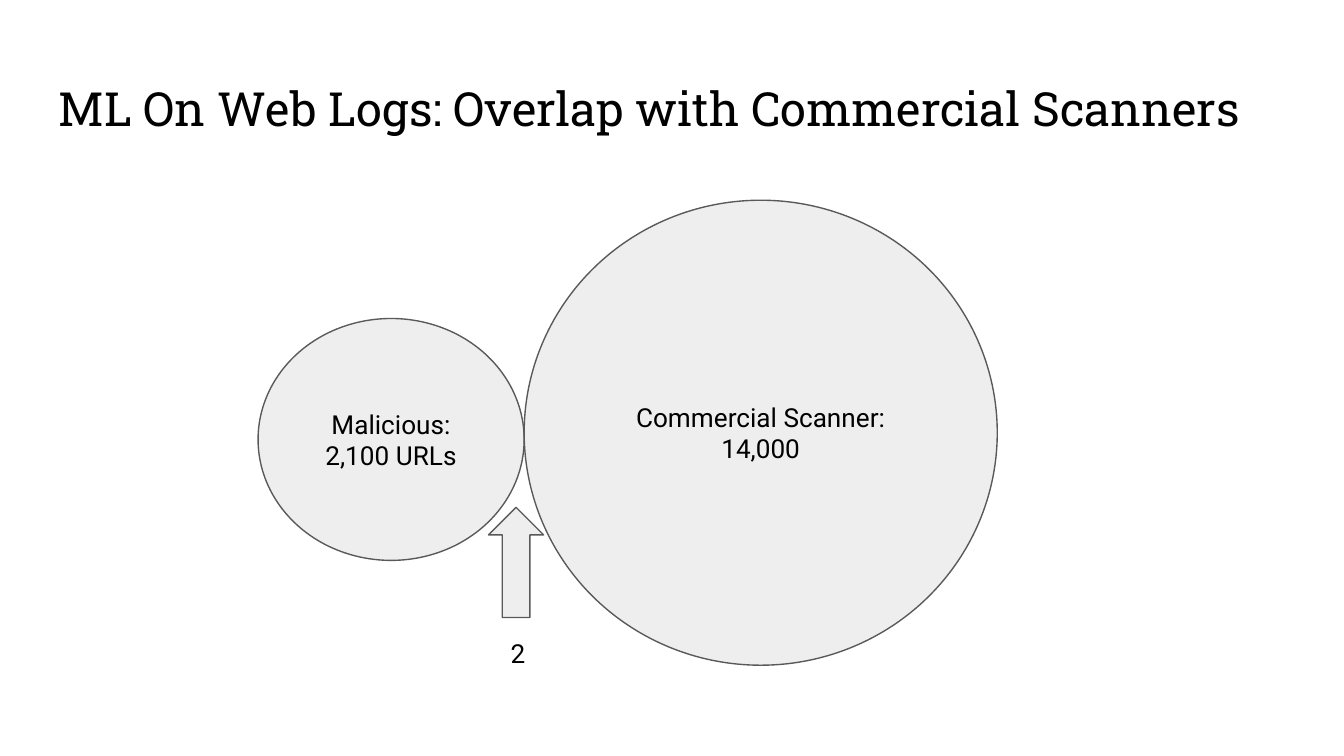
from pptx import Presentation
from pptx.dml.color import RGBColor
from pptx.enum import shapes, text
from pptx.util import Inches, Pt

BLACK = RGBColor(0x00, 0x00, 0x00)
GRAY = RGBColor(0xEE, 0xEE, 0xEE)
EDGE = RGBColor(0x59, 0x59, 0x59)
KIND = shapes.MSO_SHAPE


def write(shape, lines, size=14, font="Roboto", align=text.PP_ALIGN.LEFT,
          anchor=text.MSO_ANCHOR.TOP):
    frame = shape.text_frame
    frame.word_wrap = True
    frame.vertical_anchor = anchor
    frame.margin_left = frame.margin_right = Inches(0.1)
    frame.margin_top = frame.margin_bottom = Inches(0.1)
    for i, line in enumerate(lines):
        para = frame.add_paragraph() if i else frame.paragraphs[0]
        para.alignment = align
        run = para.add_run()
        run.text = line
        run.font.size = Pt(size)
        run.font.name = font
        run.font.color.rgb = BLACK


def add_label(slide, box, lines, **style):
    label = slide.shapes.add_textbox(*map(Inches, box))
    write(label, lines, **style)
    return label


def add_form(slide, kind, box):
    """Add a gray preset shape with a thin dark edge."""
    form = slide.shapes.add_shape(kind, *map(Inches, box))
    form.shadow.inherit = False
    form.fill.solid()
    form.fill.fore_color.rgb = GRAY
    form.line.color.rgb = EDGE
    form.line.width = Pt(0.75)
    return form


def add_title(slide, box):
    add_label(slide, box, ["ML On Web Logs: Overlap with Commercial Scanners"],
              size=25.2, font="Roboto Slab")


def add_overlap(slide, left, top):
    """Draw two touching circles, with an arrow and a count where they meet."""
    circles = [
        (0, 0.88, 1.98, 1.8, ["Malicious:", "2,100 URLs"]),
        (1.98, 0, 3.52, 3.46, ["Commercial Scanner:", "14,000"]),
    ]
    for x, y, wide, high, lines in circles:
        circle = add_form(slide, KIND.OVAL, (left + x, top + y, wide, high))
        write(circle, lines, align=text.PP_ALIGN.CENTER,
              anchor=text.MSO_ANCHOR.MIDDLE)

    arrow = add_form(slide, KIND.RIGHT_ARROW,
                     (left + 1.51, top + 2.49, 0.82, 0.41))
    arrow.rotation = 270

    count = add_label(slide, (left + 1.78, top + 3.15, 0.48, 0.44), ["2"])
    count.text_frame.auto_size = text.MSO_AUTO_SIZE.SHAPE_TO_FIT_TEXT


def main():
    deck = Presentation()
    deck.slide_width = Inches(10)
    deck.slide_height = deck.slide_width * 9 // 16
    slide = deck.slides.add_slide(deck.slide_layouts[6])
    add_title(slide, (0.34, 0.49, 9.32, 0.63))
    add_overlap(slide, 1.92, 1.49)
    deck.save("out.pptx")


if __name__ == "__main__":
    main()
